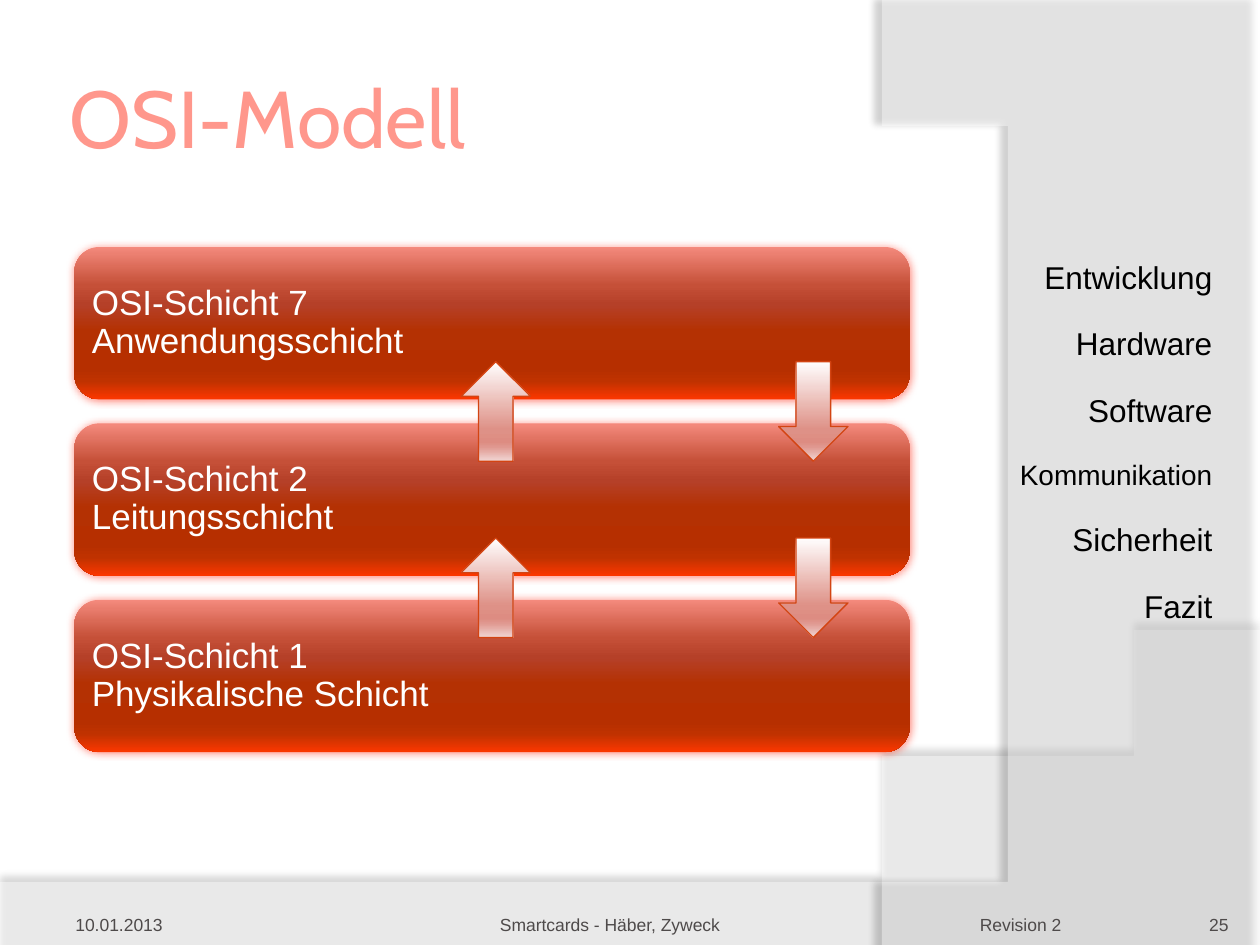
from lxml.etree import SubElement
from pptx import Presentation
from pptx.dml.color import RGBColor
from pptx.enum.shapes import MSO_SHAPE
from pptx.enum.text import MSO_ANCHOR, PP_ALIGN
from pptx.oxml.ns import qn
from pptx.util import Inches, Pt

LAYERS = ["OSI-Schicht 7\vAnwendungsschicht", "OSI-Schicht 2\vLeitungsschicht",
          "OSI-Schicht 1\vPhysikalische Schicht"]
CHAPTERS = [("Entwicklung", 18), ("Hardware", 18), ("Software", 18),
            ("Kommunikation", 16), ("Sicherheit", 18), ("Fazit", 18)]
LAYER_STOPS = [(0, "F48A7D"), (25, "C55038"), (38, "B54028"), (55, "B43103"),
               (80, "B62F00"), (88, "BF3200"), (100, "FB3700")]
ARROW_STOPS = [(0, "FFFEFE"), (68, "DE9187"), (81, "DD8C82"), (86, "E09991"), (100, "F1D6D4")]
LAYER_PITCH = 1.4


def color(hex_value):
    """Return the colour for a hex string."""
    return RGBColor.from_string(hex_value)


def apply(target, formats):
    """Set every attribute in formats on target."""
    for name, value in formats.items():
        setattr(target, name, value)


def add_color(parent, hex_value, opacity=100):
    """Append a colour element with an opacity in percent."""
    tint = SubElement(parent, qn("a:srgbClr"), val=hex_value)
    if opacity < 100:
        SubElement(tint, qn("a:alpha"), val=str(opacity * 1000))


def add_shadow(shape, hex_value, opacity, blur, distance, angle):
    """Give a shape a soft outer shadow."""
    shape.shadow.inherit = False
    effects = shape._element.spPr.find(qn("a:effectLst"))
    shadow = SubElement(effects, qn("a:outerShdw"), blurRad=str(Pt(blur)), dist=str(Pt(distance)),
                        dir=str(angle * 60000), algn="ctr", rotWithShape="0")
    add_color(shadow, hex_value, opacity)


def fill_gradient(shape, stops):
    """Fill a shape from top to bottom with the given colour stops."""
    shape.fill.gradient()
    gradient = shape._element.spPr.find(qn("a:gradFill"))
    stop_list = gradient.find(qn("a:gsLst"))
    for stop in list(stop_list):
        stop_list.remove(stop)
    for position, hex_value in stops:
        add_color(SubElement(stop_list, qn("a:gs"), pos=str(position * 1000)), hex_value)
    gradient.find(qn("a:lin")).set("ang", "5400000")


def write(frame, lines, frame_format, hex_value, font="Arial", **paragraph_format):
    """Write (wording, size) lines into a text frame."""
    apply(frame, {"word_wrap": True, **frame_format})
    for index, (wording, size) in enumerate(lines):
        paragraph = frame.add_paragraph() if index else frame.paragraphs[0]
        paragraph.text = wording
        apply(paragraph, paragraph_format)
        for run in paragraph.runs:
            apply(run.font, {"name": font, "size": Pt(size)})
            run.font.color.rgb = color(hex_value)


def margins(left, top, right, bottom):
    """Return text frame margins as format values."""
    sides = {"left": left, "top": top, "right": right, "bottom": bottom}
    return {f"margin_{side}": Inches(length) for side, length in sides.items()}


def add_text(slide, box, lines, frame_format, hex_value, **formats):
    """Place a text box in the given box."""
    label = slide.shapes.add_textbox(*map(Inches, box))
    write(label.text_frame, lines, frame_format, hex_value, **formats)


def curve(start, first, second, end, steps=48):
    """Return points along a cubic curve."""
    points = []
    for step in range(steps + 1):
        t = step / steps
        weights = ((1 - t) ** 3, 3 * t * (1 - t) ** 2, 3 * t * t * (1 - t), t ** 3)
        points.append(tuple(sum(w * p[axis] for w, p in zip(weights, (start, first, second, end)))
                            for axis in (0, 1)))
    return points


def add_wave(slide, points, opacity, shadow):
    """Draw one translucent background wave."""
    builder = slide.shapes.build_freeform(*points[0], scale=Inches(1))
    builder.add_line_segments(points[1:], close=True)
    wave = builder.convert_to_shape()
    wave.fill.solid()
    wave.fill.fore_color.rgb = color("FFFFFF")
    tint = wave._element.spPr.find(qn("a:solidFill"))[0]
    SubElement(tint, qn("a:alpha"), val=str(opacity * 1000))
    wave.line.fill.background()
    add_shadow(wave, *shadow)


def add_background(slide, width, height):
    """Draw the lower and the right wave."""
    lower = curve((width, 5.2), (5.59, 7.29), (3.91, 7.19), (0, 7.05))
    right = curve((7.02, height), (8.16, 6.19), (8.99, 3), (6.81, 0))
    add_wave(slide, [(0, height), (width, height), *lower], 45, ("000000", 35, 4, 3.5, 270))
    add_wave(slide, [(width, 0), (width, height), *right], 40, ("000000", 45, 4, 4, 180))


def add_chapters(slide, box):
    """List the chapters at the right edge."""
    add_text(slide, box, CHAPTERS, {"vertical_anchor": MSO_ANCHOR.MIDDLE}, "000000",
             alignment=PP_ALIGN.RIGHT, space_before=Pt(4.5), space_after=Pt(12))


def add_title(slide, box):
    """Place the slide title."""
    frame_format = {"vertical_anchor": MSO_ANCHOR.MIDDLE, **margins(0.05, 0.05, 0.05, 0.05)}
    add_text(slide, box, [("OSI-Modell", 46)], frame_format, "FF978C", font="Cabin")


def add_layers(slide, left, top, width, height):
    """Stack the OSI layers from top to bottom."""
    frame_format = {"vertical_anchor": MSO_ANCHOR.MIDDLE, **margins(0.08, 0.08, 0.08, 0.08)}
    for index, wording in enumerate(LAYERS):
        box = (left, top + index * LAYER_PITCH, width, height)
        layer = slide.shapes.add_shape(MSO_SHAPE.ROUNDED_RECTANGLE, *map(Inches, box))
        fill_gradient(layer, LAYER_STOPS)
        layer.line.fill.background()
        add_shadow(layer, "FF3C28", 60, 5, 0, 0)
        write(layer.text_frame, [(wording, 20)], frame_format, "FFFFFF",
              alignment=PP_ALIGN.LEFT, line_spacing=0.9)


def add_arrows(slide, kind, left, top, width, height):
    """Bridge each gap between layers with an arrow."""
    for gap in range(len(LAYERS) - 1):
        box = (left, top + gap * LAYER_PITCH, width, height)
        arrow = slide.shapes.add_shape(kind, *map(Inches, box))
        fill_gradient(arrow, ARROW_STOPS)
        arrow.line.color.rgb = color("D34412")
        arrow.line.width = Pt(0.75)
        arrow.shadow.inherit = False


def add_footer(slide, top, height):
    """Place date, topic, revision and page number."""
    entries = [("10.01.2013", 0.5, 1.74, PP_ALIGN.LEFT, (0.1, 0.05, 0.1, 0)),
               ("Smartcards - Häber, Zyweck", 2.48, 4.72, PP_ALIGN.CENTER, (0, 0.05, 0, 0)),
               ("Revision 2", 7.47, 1.26, PP_ALIGN.CENTER, (0, 0.05, 0, 0)),
               ("25", 8.92, 0.83, PP_ALIGN.RIGHT, (0, 0, 0, 0))]
    for wording, left, width, alignment, insets in entries:
        frame_format = {"vertical_anchor": MSO_ANCHOR.BOTTOM, **margins(*insets)}
        add_text(slide, (left, top, width, height), [(wording, 10)], frame_format, "4E4A4A",
                 alignment=alignment)


def main():
    """Build and save the slide."""
    deck = Presentation()
    apply(deck, {"slide_width": Inches(10), "slide_height": Inches(7.5)})
    slide = deck.slides.add_slide(deck.slide_layouts[6])
    add_background(slide, 10, 7.5)
    add_chapters(slide, (7.93, 0.29, 1.79, 6.42))
    add_title(slide, (0.5, 0.3, 7.26, 1.25))
    add_layers(slide, 0.59, 1.96, 6.63, 1.21)
    add_footer(slide, 7.02, 0.4)
    add_arrows(slide, MSO_SHAPE.DOWN_ARROW, 6.18, 2.87, 0.55, 0.79)
    add_arrows(slide, MSO_SHAPE.UP_ARROW, 3.66, 2.87, 0.55, 0.79)
    deck.save("out.pptx")


if __name__ == "__main__":
    main()
